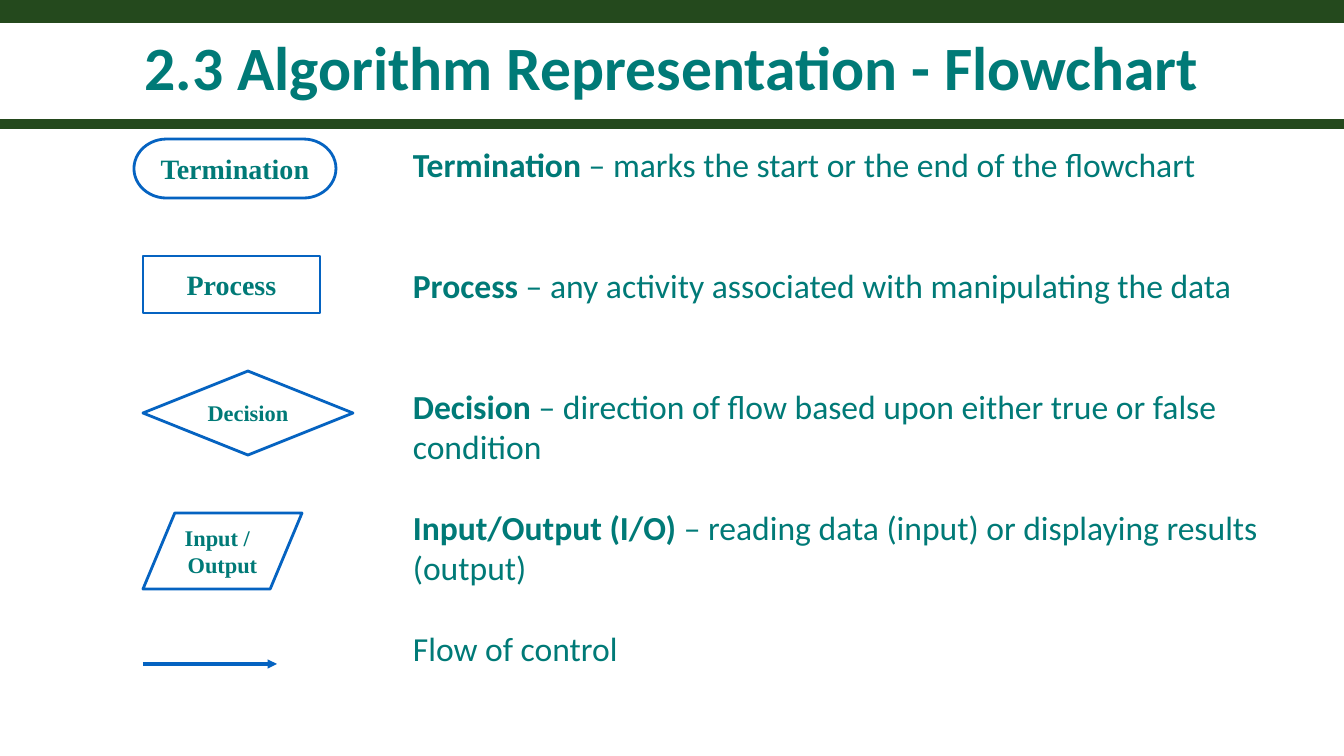
from lxml import etree
from pptx import Presentation
from pptx import util as u
from pptx.dml.color import RGBColor
from pptx.enum import shapes, text
from pptx.oxml.ns import qn

PX = 914400 / 100.8  # EMU per pixel
TEAL, BLUE, GREEN = "007A77", "0563C1", "24491D"
KIND = shapes.MSO_SHAPE
CENTER, LEFT = text.PP_ALIGN.CENTER, text.PP_ALIGN.LEFT

# kind, box relative to the symbol column, font size, lines of the label
SYMBOLS = [
    (KIND.FLOWCHART_TERMINATOR, (0, 0, 202, 59), 20, [("Termination", CENTER)]),
    (KIND.FLOWCHART_PROCESS, (9, 117, 177, 57), 20, [("Process", CENTER)]),
    (KIND.FLOWCHART_DECISION, (9, 232, 210, 84), 16, [("Decision", CENTER)]),
    (KIND.FLOWCHART_DATA, (9, 374, 159, 76), 16, [("Input /", LEFT), ("Output", CENTER)]),
]

# term, meaning, number of lines it fills
MEANINGS = [
    ("Termination", " – marks the start or the end of the flowchart", 1),
    ("Process", " – any activity associated with manipulating the data", 1),
    ("Decision", " – direction of flow based upon either true or false condition", 2),
    ("Input/Output (I/O)", " – reading data (input) or displaying results (output)", 2),
    ("", "Flow of control", 1),
]
LINE_HEIGHT = 28.8  # points
LINES_PER_ROW = 3


def px(*lengths):
    return [u.Emu(round(n * PX)) for n in lengths]


def color(hex_string):
    return RGBColor.from_string(hex_string)


def set_font(font, name, size, bold=None):
    font.name, font.size, font.bold = name, u.Pt(size), bold
    font.color.rgb = color(TEAL)


def add_line(slide, x1, y1, x2, y2, stroke, width):
    line = slide.shapes.add_connector(shapes.MSO_CONNECTOR.STRAIGHT, *px(x1, y1, x2, y2))
    line.line.color.rgb = color(stroke)
    line.line.width = u.Pt(width)
    etree.SubElement(line._element.spPr, qn("a:effectLst"))
    return line


def add_header(slide, left, top, width):
    # Green bands above and below the title
    for y, thickness in ((11, 16.5), (124, 7.5)):
        add_line(slide, left, top + y, left + width, top + y, GREEN, thickness)

    title = slide.shapes.add_textbox(*px(left + 9, top + 25, width - 17, 92)).text_frame
    title.word_wrap = True
    title.vertical_anchor = text.MSO_ANCHOR.MIDDLE
    heading = title.paragraphs[0]
    heading.text = "2.3 Algorithm Representation - Flowchart"
    heading.alignment = CENTER
    heading.line_spacing = 0.9
    set_font(heading.font, "Calibri", 44, True)


def add_symbols(slide, left, top):
    for kind, (x, y, width, height), size, label in SYMBOLS:
        symbol = slide.shapes.add_shape(kind, *px(left + x, top + y, width, height))
        symbol.shadow.inherit = False
        symbol.fill.background()
        symbol.line.color.rgb = color(BLUE)
        symbol.line.width = u.Pt(2)
        frame = symbol.text_frame
        frame.vertical_anchor = text.MSO_ANCHOR.MIDDLE
        for i, (words, alignment) in enumerate(label):
            row = frame.add_paragraph() if i else frame.paragraphs[0]
            row.text = words
            row.alignment = alignment
            set_font(row.font, "Times New Roman", size, True)

    # Flow arrow
    arrow = add_line(slide, left + 9, top + 525, left + 143, top + 525, BLUE, 2.25)
    etree.SubElement(arrow.line._get_or_add_ln(), qn("a:tailEnd"), type="triangle")


def add_meanings(slide, left, top, width, height):
    frame = slide.shapes.add_textbox(*px(left, top, width, height)).text_frame
    frame.word_wrap = True
    for i, (term, meaning, lines) in enumerate(MEANINGS):
        entry = frame.add_paragraph() if i else frame.paragraphs[0]
        set_font(entry.font, "Calibri", 24)
        # Every entry takes the same height, however many lines it fills
        entry.space_after = u.Pt((LINES_PER_ROW - lines) * LINE_HEIGHT)
        if term:
            name = entry.add_run()
            name.text = term
            name.font.bold = True
        entry.add_run().text = meaning


def main():
    deck = Presentation()
    deck.slide_width, deck.slide_height = px(1344, 756)
    slide = deck.slides.add_slide(deck.slide_layouts[6])
    add_header(slide, 0, 0, 1344)
    add_symbols(slide, 134, 139)
    add_meanings(slide, 403, 139, 933, 539)
    deck.save("out.pptx")


if __name__ == "__main__":
    main()
